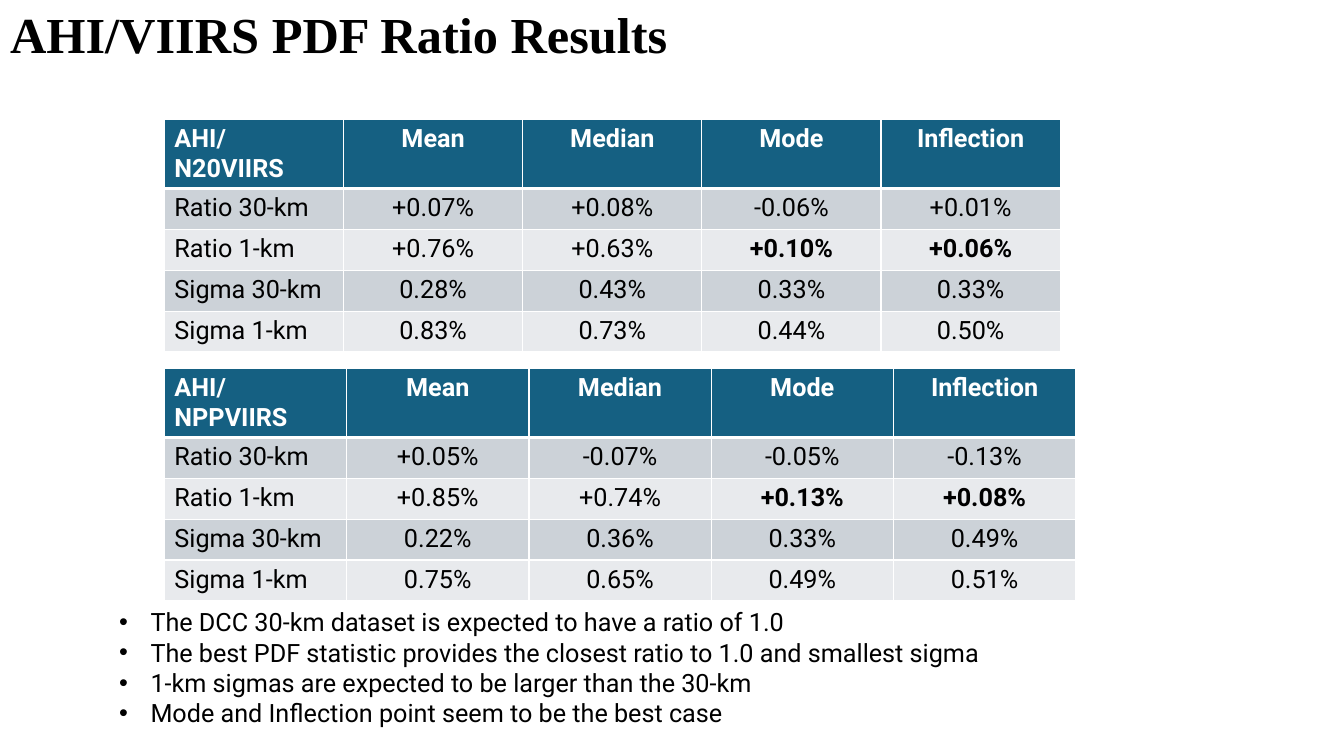
from lxml import etree
from pptx import Presentation
from pptx import util as u
from pptx.dml import color
from pptx.enum import text
from pptx.oxml import ns

HEADINGS = ["Mean", "Median", "Mode", "Inflection"]
LABELS = ["Ratio 30-km", "Ratio 1-km", "Sigma 30-km", "Sigma 1-km"]
N20_VALUES = [
    ["+0.07%", "+0.08%", "-0.06%", "+0.01%"],
    ["+0.76%", "+0.63%", "+0.10%", "+0.06%"],
    ["0.28%", "0.43%", "0.33%", "0.33%"],
    ["0.83%", "0.73%", "0.44%", "0.50%"],
]
NPP_VALUES = [
    ["+0.05%", "-0.07%", "-0.05%", "-0.13%"],
    ["+0.85%", "+0.74%", "+0.13%", "+0.08%"],
    ["0.22%", "0.36%", "0.33%", "0.49%"],
    ["0.75%", "0.65%", "0.49%", "0.51%"],
]
FINDINGS = [
    "The DCC 30-km dataset is expected to have a ratio of 1.0",
    "The best PDF statistic provides the closest ratio to 1.0 and smallest sigma",
    "1-km sigmas are expected to be larger than the 30-km",
    "Mode and Inflection point seem to be the best case",
]
BEST_CELLS = {(2, 3), (2, 4)}
ROW_HEIGHT = 29.2


def rgb(value):
    return color.RGBColor.from_string(value)


def add_run(paragraph, words, size=18, font="Roboto", fill="000000", bold=False):
    run = paragraph.add_run()
    run.text = words
    run.font.size = u.Pt(size)
    run.font.name = font
    run.font.bold = bold
    run.font.color.rgb = rgb(fill)


def place(shape, left, top, width, height, anchor):
    shape.left, shape.top = u.Pt(left), u.Pt(top)
    shape.width, shape.height = u.Pt(width), u.Pt(height)
    frame = shape.text_frame
    frame.word_wrap = True
    frame.auto_size = text.MSO_AUTO_SIZE.NONE
    frame.vertical_anchor = anchor
    return frame


def fill_title(shape, words):
    frame = place(shape, 0, 0, 828, 53.3, text.MSO_ANCHOR.MIDDLE)
    paragraph = frame.paragraphs[0]
    paragraph.alignment = text.PP_ALIGN.LEFT
    paragraph.line_spacing = 0.9
    add_run(paragraph, words, 36, "Times New Roman", bold=True)


def set_bullet(paragraph, indent):
    properties = paragraph._p.get_or_add_pPr()
    properties.set("marL", str(u.Pt(indent)))
    properties.set("indent", str(-u.Pt(indent)))
    etree.SubElement(properties, ns.qn("a:buFont"), typeface="Arial")
    etree.SubElement(properties, ns.qn("a:buChar"), char="•")


def fill_list(shape, items):
    frame = place(shape, 77.8, 429.8, 766.8, 94.3, text.MSO_ANCHOR.TOP)
    for index, item in enumerate(items):
        paragraph = frame.add_paragraph() if index else frame.paragraphs[0]
        paragraph.alignment = text.PP_ALIGN.LEFT
        paragraph.space_before = u.Pt(0)
        paragraph.line_spacing = 1.0
        set_bullet(paragraph, 22.5)
        add_run(paragraph, item)


def set_borders(cell, top, bottom):
    properties = cell._tc.get_or_add_tcPr()
    for side, width in (("L", 1), ("R", 1), ("T", top), ("B", bottom)):
        line = etree.SubElement(properties, ns.qn("a:ln" + side), w=str(u.Pt(width)))
        solid = etree.SubElement(line, ns.qn("a:solidFill"))
        etree.SubElement(solid, ns.qn("a:srgbClr"), val="FFFFFF")


def fill_cell(cell, words, row, column):
    header = row == 0
    set_borders(cell, 3 if row == 1 else 1, 3 if header else 1)
    cell.fill.solid()
    band = "CCD2D8" if row % 2 else "E8EAED"
    cell.fill.fore_color.rgb = rgb("156082" if header else band)
    paragraph = cell.text_frame.paragraphs[0]
    paragraph.alignment = text.PP_ALIGN.CENTER if column else text.PP_ALIGN.LEFT
    add_run(paragraph, words, fill="FFFFFF" if header else "000000",
            bold=header or (row, column) in BEST_CELLS)


def add_results(slide, name, values, top, width):
    rows = [[name] + HEADINGS]
    rows += [[label] + line for label, line in zip(LABELS, values)]
    frame = slide.shapes.add_table(
        len(rows), len(rows[0]), u.Pt(117.4), u.Pt(top),
        u.Pt(width), u.Pt(ROW_HEIGHT * len(rows)))
    for row, line in enumerate(rows):
        for column, words in enumerate(line):
            fill_cell(frame.table.cell(row, column), words, row, column)


def main():
    presentation = Presentation()
    presentation.slide_width, presentation.slide_height = u.Pt(960), u.Pt(540)
    slide = presentation.slides.add_slide(presentation.slide_layouts[1])
    fill_title(slide.shapes.title, "AHI/VIIRS PDF Ratio Results")
    fill_list(slide.placeholders[1], FINDINGS)
    add_results(slide, "AHI/N20VIIRS", N20_VALUES, 85.2, 640)
    add_results(slide, "AHI/NPPVIIRS", NPP_VALUES, 263, 651)
    presentation.save("out.pptx")


if __name__ == "__main__":
    main()
